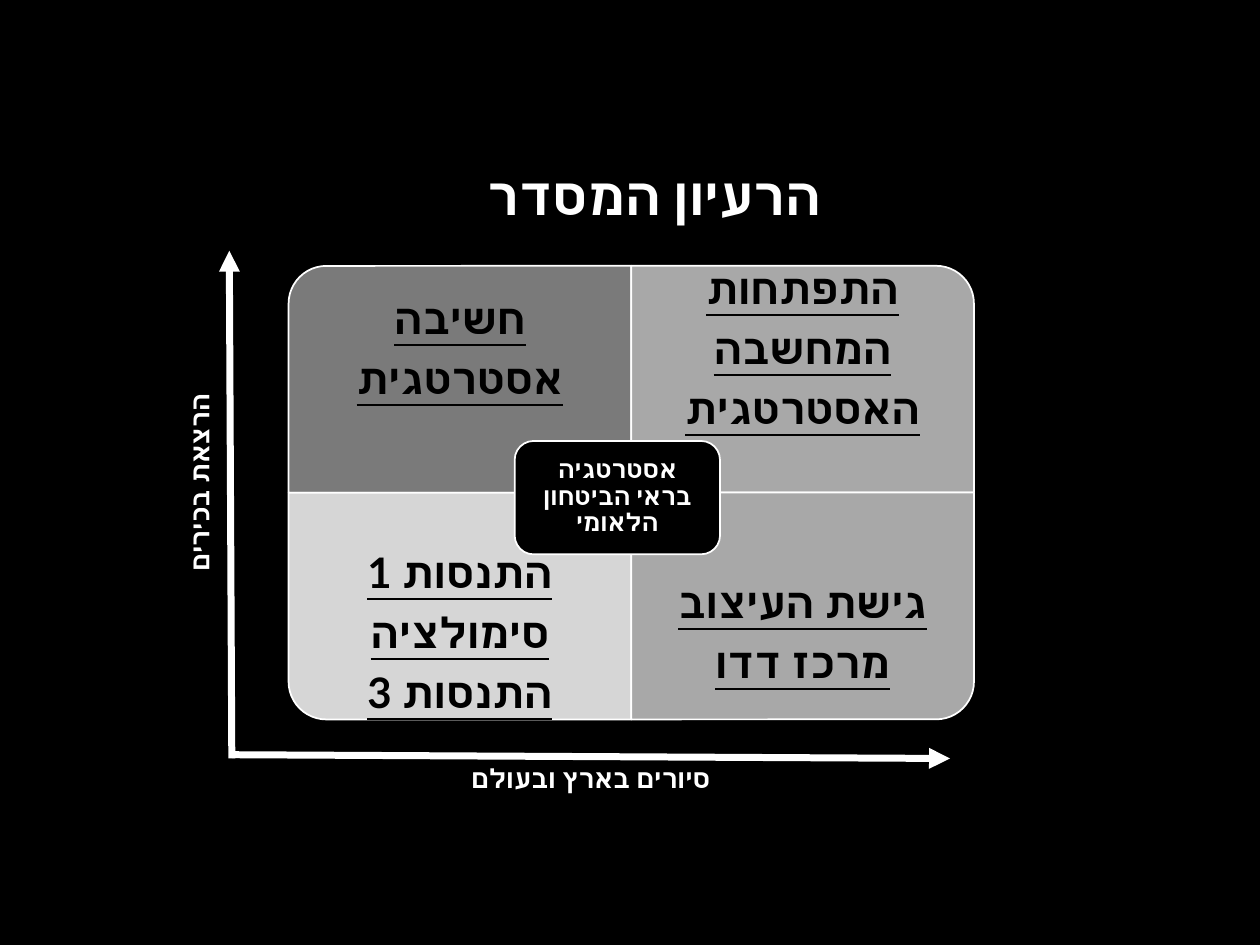
import pptx
import pptx.util
import pptx.dml.color
import pptx.enum.shapes
import pptx.enum.text
import pptx.oxml.ns
from lxml import etree

Inches, Pt = pptx.util.Inches, pptx.util.Pt
RGB = pptx.dml.color.RGBColor
KIND = pptx.enum.shapes.MSO_SHAPE
ALIGN = pptx.enum.text.PP_ALIGN
FIT = pptx.enum.text.MSO_AUTO_SIZE
qn = pptx.oxml.ns.qn

BLACK = RGB(0x00, 0x00, 0x00)
WHITE = RGB(0xFF, 0xFF, 0xFF)
DARK = RGB(0x7A, 0x7A, 0x7A)
MID = RGB(0xA8, 0xA8, 0xA8)
LIGHT = RGB(0xD6, 0xD6, 0xD6)

deck = pptx.Presentation()
deck.slide_width, deck.slide_height = Inches(10), Inches(7.5)
slide = deck.slides.add_slide(deck.slide_layouts[6])
slide.background.fill.solid()
slide.background.fill.fore_color.rgb = BLACK
shapes = slide.shapes


def panel(kind, x, y, w, h, fill, turn=0):
    """Outlined shape centred on x, y; w and h are its size before turning."""
    box = shapes.add_shape(kind, Inches(x - w / 2), Inches(y - h / 2), Inches(w), Inches(h))
    box.rotation = turn
    box.shadow.inherit = False
    box.fill.solid()
    box.fill.fore_color.rgb = fill
    box.line.color.rgb = WHITE
    box.line.width = Pt(1)


def write(lines, x, y, w, h, size, color, pad, align=ALIGN.CENTER, after=0, under=None, wrap=True):
    """Right-to-left bold text, one paragraph for each line."""
    box = shapes.add_textbox(Inches(x), Inches(y), Inches(w), Inches(h))
    frame = box.text_frame
    frame.word_wrap = wrap
    frame.vertical_anchor = pptx.enum.text.MSO_ANCHOR.MIDDLE
    frame.margin_left = frame.margin_right = Inches(pad[0])
    frame.margin_top = frame.margin_bottom = Inches(pad[1])
    frame.text = "\n".join(lines)
    for para in frame.paragraphs:
        para.alignment = align
        para.line_spacing = 0.9
        para.space_after = Pt(after)
        para._p.get_or_add_pPr().set("rtl", "1")
        font = para.font
        font.size, font.bold, font.underline = Pt(size), True, under
        font.color.rgb = color
        font.name = "Lato"
        etree.SubElement(font._element, qn("a:cs"), typeface="Lato")
    return box


# Title
tight = (0.07, 0.04)
title = write(["הרעיון המסדר"], 3.41, 1.31, 3.18, 0.53, 30, WHITE, tight, ALIGN.RIGHT, wrap=False)
title.text_frame.auto_size = FIT.SHAPE_TO_FIT_TEXT

# Quadrants: column, row, turn, fill, lines
COL, ROW = 2.72, 1.8
LEFT, TOP = 2.29, 2.11
DEEP = ROW * 0.75
quads = [
    (0, 0, 270, DARK, ["חשיבה", "אסטרטגית"]),
    (1, 0, 0, MID, ["התפתחות", "המחשבה", "האסטרטגית"]),
    (0, 1, 180, LIGHT, ["התנסות 1", "סימולציה", "התנסות 3"]),
    (1, 1, 90, MID, ["גישת העיצוב", "מרכז דדו"]),
]
for col, row, turn, fill, lines in quads:
    x, y = LEFT + col * COL, TOP + row * ROW
    size = (ROW, COL) if turn % 180 else (COL, ROW)
    panel(KIND.ROUND_1_RECTANGLE, x + COL / 2, y + ROW / 2, *size, fill, turn)
    write(lines, x, y + row * (ROW - DEEP), COL, DEEP, 24, BLACK, (0.19, 0.19),
          after=8.4, under=True)

# Centre
panel(KIND.ROUNDED_RECTANGLE, 4.9, 3.95, 1.63, ROW / 2, BLACK)
write(["אסטרטגיה בראי הביטחון הלאומי"], 4.13, 3.54, 1.54, 0.81, 14, WHITE, (0.06, 0.06), after=4.9)

# Axes
for ends in [(1.84, 5.99, 7.54, 6.02), (1.84, 6.02, 1.82, 1.99)]:
    axis = shapes.add_connector(pptx.enum.shapes.MSO_CONNECTOR.STRAIGHT, *map(Inches, ends))
    axis.line.color.rgb = WHITE
    axis.line.width = Pt(4)
    etree.SubElement(axis.line._get_or_add_ln(), qn("a:tailEnd"), type="triangle")
    etree.SubElement(axis._element.spPr, qn("a:effectLst"))

# Axis labels
labels = [("סיורים בארץ ובעולם", 3.08, 6.04, 2.63, 0, True),
          ("הרצאת בכירים", 0.74, 3.76, 1.71, 270, False)]
for text, x, y, w, turn, wrap in labels:
    label = write([text], x, y, w, 0.3, 15, WHITE, tight, ALIGN.RIGHT, wrap=wrap)
    label.text_frame.auto_size = FIT.SHAPE_TO_FIT_TEXT
    label.rotation = turn

deck.save("out.pptx")
